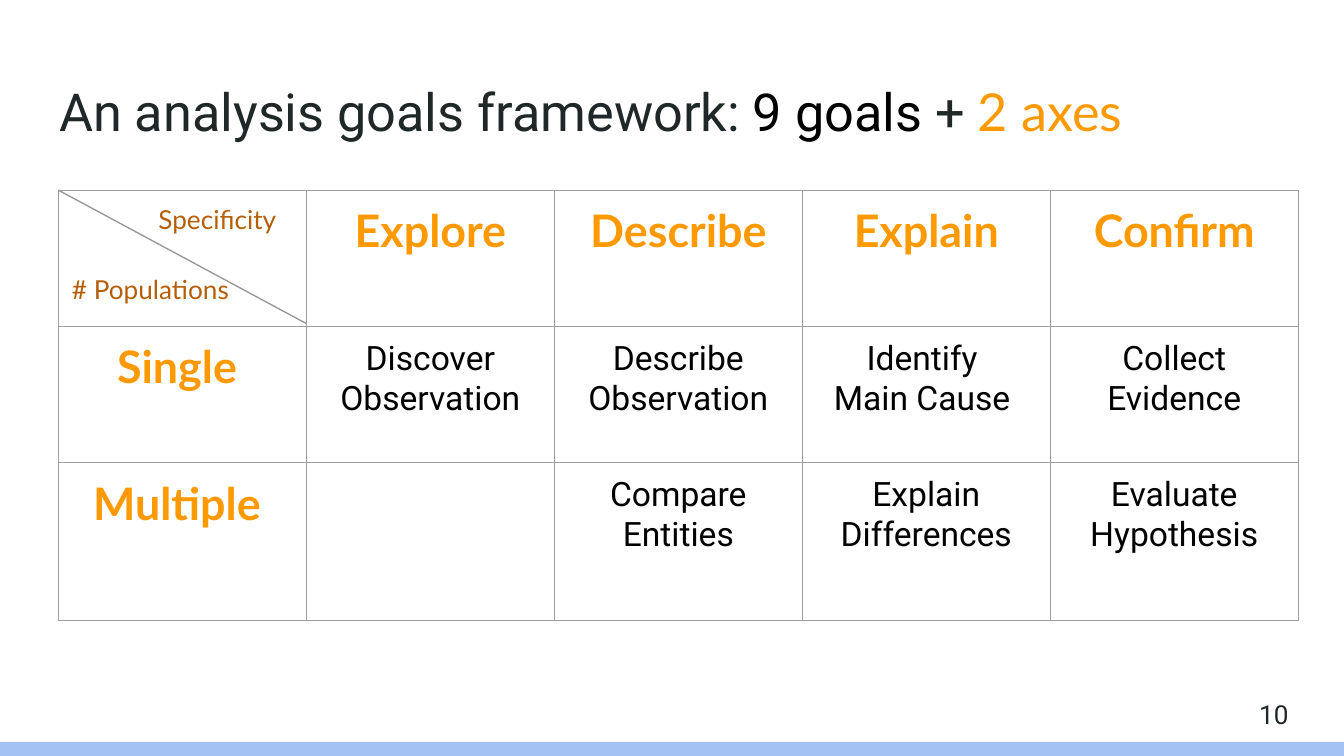
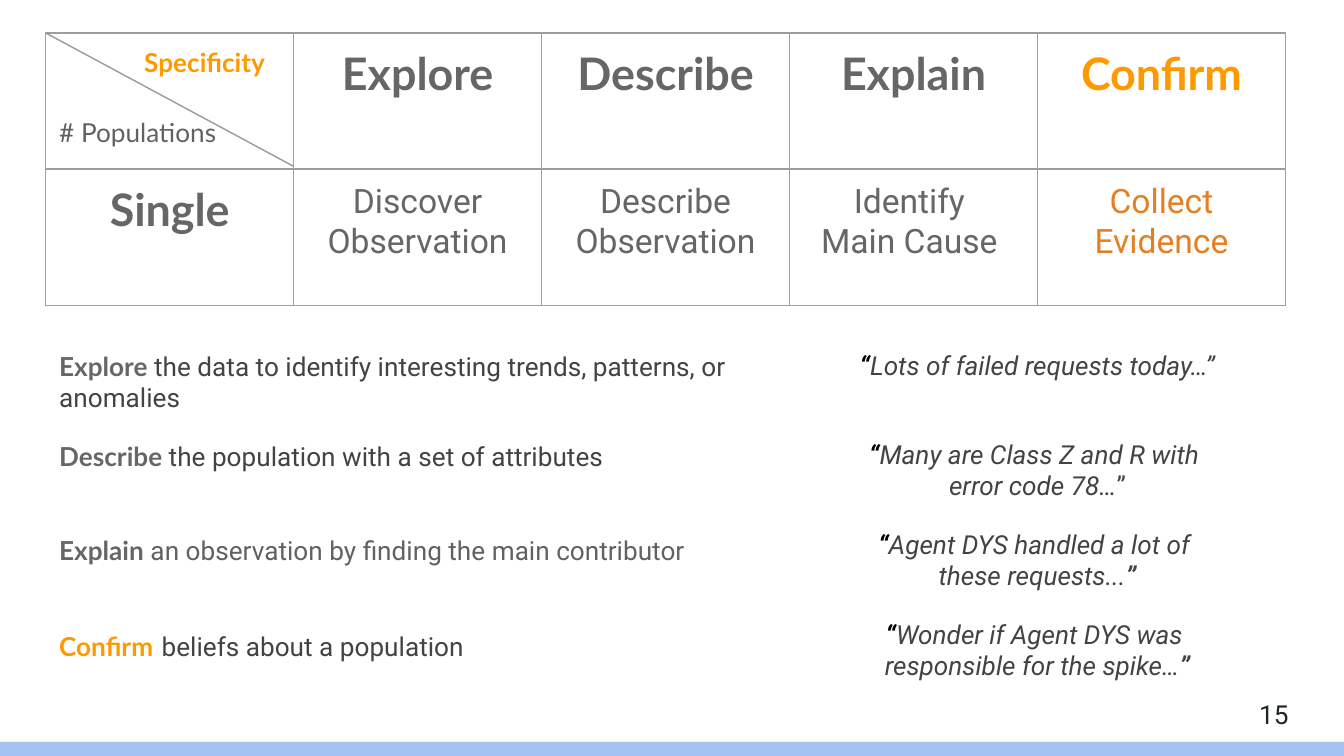
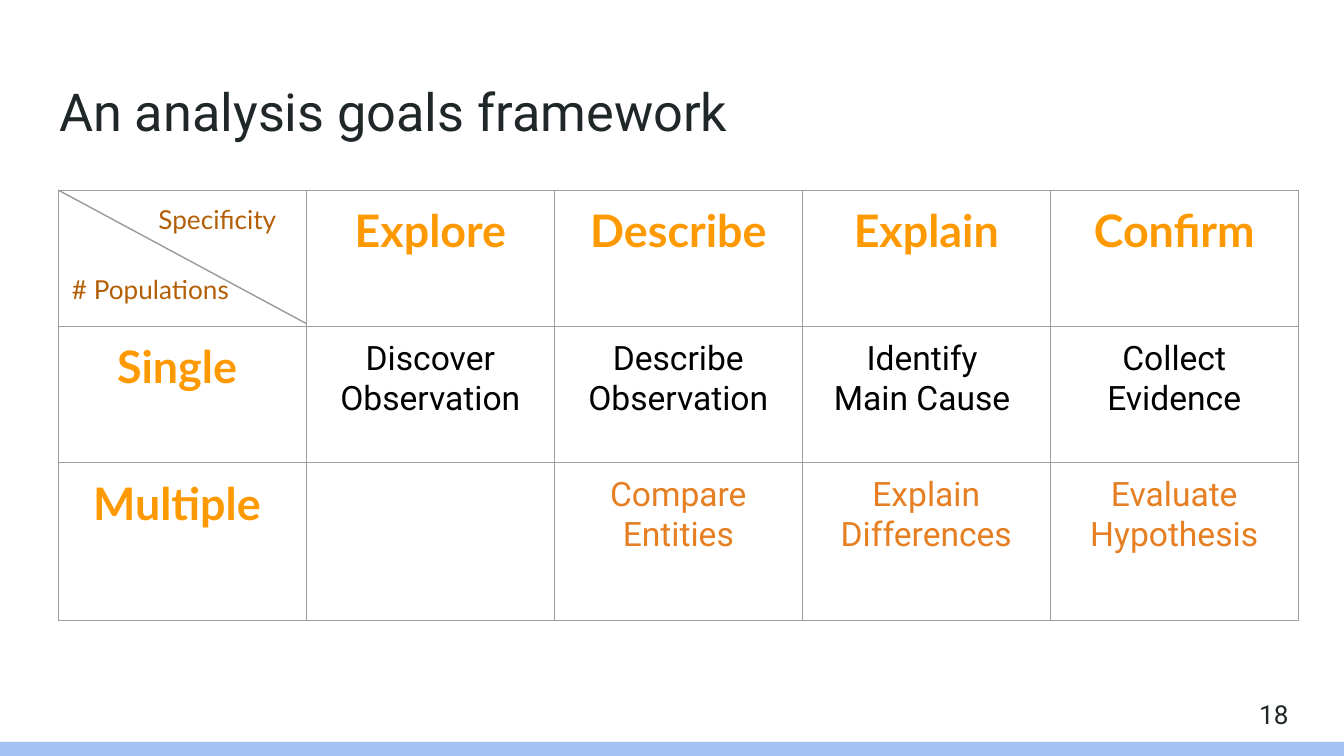
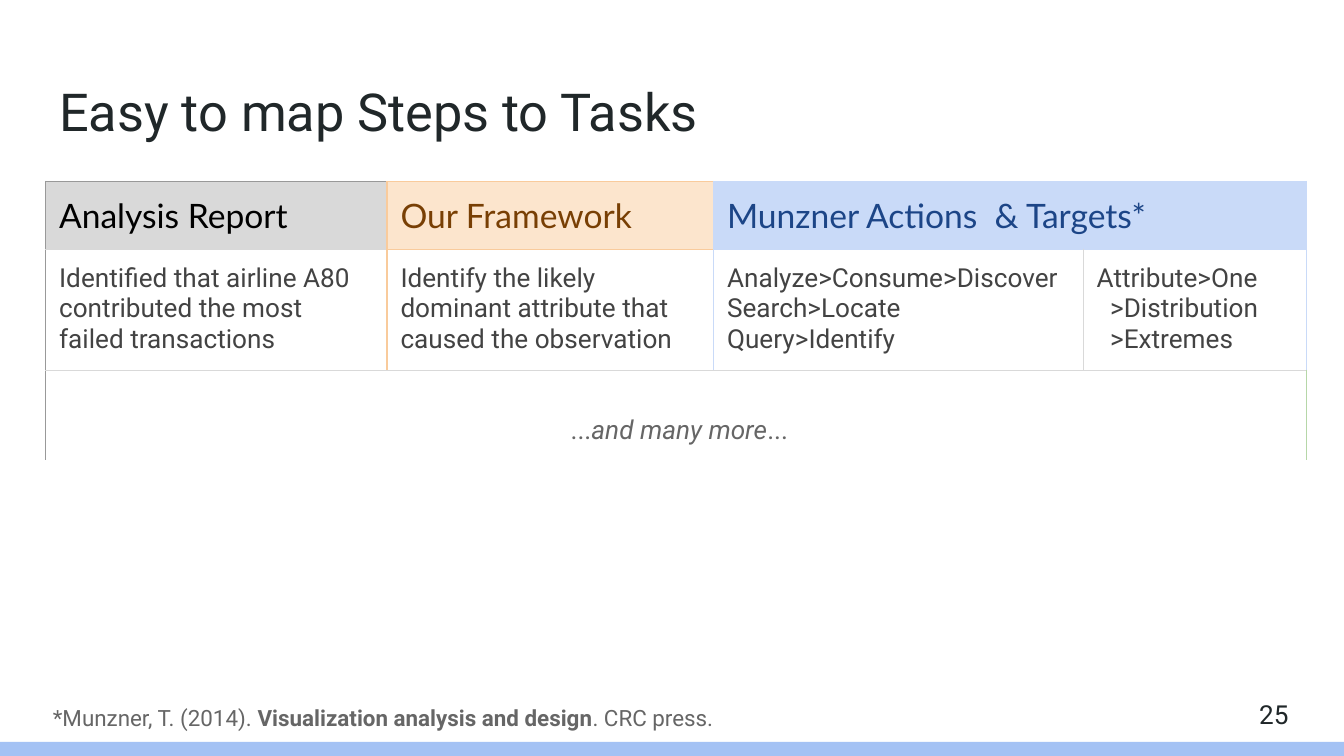
import dataclasses

import lxml.etree
import pptx
import pptx.dml.color
import pptx.enum.shapes
import pptx.enum.text
import pptx.oxml.ns
import pptx.util

ALIGN = pptx.enum.text.PP_ALIGN
ANCHOR = pptx.enum.text.MSO_ANCHOR
WIDE, HIGH = 100, 56.25
INSET = 1
MARGIN = 3.4
BLACK, INK, TEXT = "000000", "202729", "434343"
GREY, SOFT, LINE, RULE = "666666", "616161", "9E9E9E", "999999"
ORANGE, BROWN, CARROT = "FF9900", "B45F06", "E67E22"
SILVER, PEACH, SKY, LEAF = "D9D9D9", "F9CB9C", "C9DAF8", "B6D7A8"
NO_STYLE = "{2D5ABB26-0587-4C30-8999-92F81FD0307C}"
BOXED = dict.fromkeys("LRTB", LINE)
SPECIFICITY = ["Explore", "Describe", "Explain", "Confirm"]
SINGLE_GOALS = ["Discover Observation", "Describe Observation",
                "Identify \nMain Cause ", "Collect Evidence"]
MULTIPLE_GOALS = ["", "Compare Entities", "Explain Differences", "Evaluate Hypothesis"]


@dataclasses.dataclass
class Run:
    text: str
    font: str
    size: float
    color: str
    bold: bool = False
    italic: bool = False


@dataclasses.dataclass
class Para:
    runs: list
    align: object = ALIGN.LEFT
    before: float = 0
    after: float = 0
    spacing: float = 1.0
    indent: float = 0


def lato(text, size, color, bold=False):
    return Run(text, "Lato", size, color, bold)


def roboto(text, size, color, bold=False, italic=False):
    return Run(text, "Roboto", size, color, bold, italic)


def grid(n):
    return pptx.util.Inches(n / 10)


def rgb(color):
    return pptx.dml.color.RGBColor.from_string(color)


def add_run(p, spec):
    for i, text in enumerate(spec.text.split("\n")):
        if i:
            p.add_line_break()
        r = p.add_run()
        r.text = text
        r.font.name = spec.font
        r.font.size = pptx.util.Pt(spec.size)
        r.font.bold = spec.bold
        r.font.italic = spec.italic
        r.font.color.rgb = rgb(spec.color)


def write(tf, paras):
    tf.word_wrap = True
    for i, para in enumerate(paras):
        p = tf.add_paragraph() if i else tf.paragraphs[0]
        p.alignment = para.align
        p.line_spacing = para.spacing
        p.space_before = pptx.util.Pt(para.before)
        p.space_after = pptx.util.Pt(para.after)
        if para.indent:
            p._p.get_or_add_pPr().set("marL", str(grid(para.indent)))
        for spec in para.runs:
            add_run(p, spec)


def set_insets(holder, top=INSET):
    holder.margin_left = holder.margin_right = holder.margin_bottom = grid(INSET)
    holder.margin_top = grid(top)


def set_borders(cell, colors):
    tc_pr = cell._tc.get_or_add_tcPr()
    qn = pptx.oxml.ns.qn
    for side in "LRTB":
        ln = lxml.etree.SubElement(tc_pr, qn("a:ln" + side), w=str(pptx.util.Pt(0.75)))
        if side in colors:
            fill = lxml.etree.SubElement(ln, qn("a:solidFill"))
            lxml.etree.SubElement(fill, qn("a:srgbClr"), val=colors[side])
        else:
            lxml.etree.SubElement(ln, qn("a:noFill"))


def fill_cell(tbl, row, col, paras, borders, span=1, fill=None, top=INSET):
    for c in range(col, col + span):
        cell = tbl.cell(row, c)
        set_borders(cell, borders)
        if fill:
            cell.fill.solid()
            cell.fill.fore_color.rgb = rgb(fill)
        else:
            cell.fill.background()
    cell = tbl.cell(row, col)
    if span > 1:
        cell.merge(tbl.cell(row, col + span - 1))
    set_insets(cell, top)
    write(cell.text_frame, paras)


def add_table(s, left, top, widths, heights):
    frame = s.shapes.add_table(len(heights), len(widths), grid(left), grid(top),
                               grid(sum(widths)), grid(sum(heights)))
    tbl = frame.table
    tbl.first_row = tbl.horz_banding = False
    tbl._tbl.tblPr.find(pptx.oxml.ns.qn("a:tableStyleId")).text = NO_STYLE
    for column, width in zip(tbl.columns, widths):
        column.width = grid(width)
    for row, height in zip(tbl.rows, heights):
        row.height = grid(height)
    return tbl


def add_diagonal(s, left, top, width, height):
    line = s.shapes.add_connector(pptx.enum.shapes.MSO_CONNECTOR.STRAIGHT, grid(left),
                                  grid(top), grid(left + width), grid(top + height))
    line.line.color.rgb = rgb(RULE)
    line.line.width = pptx.util.Pt(0.75)
    lxml.etree.SubElement(line._element.spPr, pptx.oxml.ns.qn("a:effectLst"))


def add_text(s, left, top, width, height, runs, anchor=ANCHOR.TOP):
    tf = s.shapes.add_textbox(grid(left), grid(top), grid(width), grid(height)).text_frame
    set_insets(tf)
    tf.vertical_anchor = anchor
    write(tf, [Para(runs)])


def add_master_band(prs, s):
    band = s.shapes.add_shape(pptx.enum.shapes.MSO_SHAPE.RECTANGLE, 0, grid(HIGH - 1.05),
                              grid(WIDE), grid(1.05))
    band.shadow.inherit = False
    band.fill.solid()
    band.fill.fore_color.rgb = rgb("A4C2F4")
    band.line.fill.background()
    band._element.nvSpPr.cNvPr.set("id", "99")
    prs.slide_master.shapes._spTree.insert(2, band._element)


def add_slide(prs, number, title=None):
    s = prs.slides.add_slide(prs.slide_layouts[5 if title else 6])
    if title:
        sp = s.shapes.title
        sp.left, sp.top, sp.width, sp.height = map(
            grid, (MARGIN, 4.9, WIDE - 2 * MARGIN, 6.3))
        tf = sp.text_frame
        set_insets(tf)
        tf.vertical_anchor = ANCHOR.TOP
        tf.auto_size = pptx.enum.text.MSO_AUTO_SIZE.NONE
        write(tf, [Para(title)])
    add_text(s, WIDE - 7.3, HIGH - 5.25, 6, 4.3, [roboto(str(number), 14, INK)], ANCHOR.MIDDLE)
    return s


def title_run(text, color=INK):
    return roboto(text, 28, color)


def add_framework(s, left, top, heights, axes, head_colors, goal_rows):
    width = 18.45
    tbl = add_table(s, left, top, [width] * 5, heights)
    specificity, populations = axes
    fill_cell(tbl, 0, 0, [Para([specificity], ALIGN.CENTER, indent=5.2),
                          Para([populations], before=21)], BOXED)
    for col, (name, color) in enumerate(zip(SPECIFICITY, head_colors), 1):
        fill_cell(tbl, 0, col, [Para([lato(name, 24, color, True)], ALIGN.CENTER)], BOXED)
    for row, (label, label_color, goals, colors) in enumerate(goal_rows, 1):
        fill_cell(tbl, row, 0, [Para([lato(label, 24, label_color, True)], ALIGN.CENTER)], BOXED)
        for col, (goal, color) in enumerate(zip(goals, colors), 1):
            runs = [roboto(goal, 18, color)] if goal else []
            fill_cell(tbl, row, col, [Para(runs, ALIGN.CENTER)], BOXED)
    add_diagonal(s, left, top, width, heights[0] - 0.2)
    return tbl


def framework_slide(prs, number, title, multiple_color):
    s = add_slide(prs, number, title)
    axes = lato("Specificity", 14, BROWN), lato("# Populations", 14, BROWN)
    add_framework(s, 4.35, 14.15, [10.13, 10.13, 11.75], axes, [ORANGE] * 4,
                  [("Single ", ORANGE, SINGLE_GOALS, [BLACK] * 4),
                   ("Multiple ", ORANGE, MULTIPLE_GOALS, [multiple_color] * 4)])
    return s


def quote_paras(lines, closing):
    paras = [Para([roboto(line, 14, TEXT, italic=True)], ALIGN.CENTER) for line in lines]
    paras[0].runs.insert(0, roboto("“", 14, BLACK, True, True))
    paras[-1].runs.append(closing)
    return paras


def single_population_slide(prs, number):
    s = add_slide(prs, number)
    axes = lato("Specificity", 14, ORANGE, True), lato("# Populations", 14, SOFT)
    tbl = add_framework(s, MARGIN, 2.45, [10.13, 10.13, 9, 6.6, 6.6, 6.6], axes,
                        [GREY] * 3 + [ORANGE],
                        [("Single", GREY, SINGLE_GOALS, [GREY] * 3 + [CARROT])])
    bold_close = roboto("”", 14, TEXT, True, True)
    meanings = [
        (Para([lato("Explore ", 14, GREY, True),
               roboto("the data to identify interesting trends, patterns, or anomalies", 14, TEXT)]),
         ["Lots of failed requests today…"], roboto("”", 14, TEXT, italic=True)),
        (Para([lato("Describe ", 14, GREY, True),
               roboto("the population with a set of attributes", 14, TEXT)]),
         ["Many are Class Z and R with ", "error code 78…"], roboto("”", 14, TEXT)),
        (Para([lato("Explain", 14, GREY, True),
               roboto(" an observation by finding the main contributor", 14, SOFT)],
              after=16, spacing=1.15),
         ["Agent DYS handled a lot of ", "these requests..."], bold_close),
        (Para([lato("Confirm", 14, ORANGE, True), roboto(" ", 18, SOFT),
               roboto("beliefs about a population", 14, TEXT)], after=16, spacing=1.15),
         ["Wonder if Agent DYS was ", "responsible for the spike…"], bold_close),
    ]
    for row, (meaning, lines, closing) in enumerate(meanings, 2):
        borders, top = ({"T": LINE}, 3.4) if row == 2 else ({}, INSET)
        fill_cell(tbl, row, 0, [meaning], borders, 3, top=top)
        fill_cell(tbl, row, 3, quote_paras(lines, closing), borders, 2, top=top)


def mapping_slide(prs, number):
    s = add_slide(prs, number, [title_run("Easy to map Steps to Tasks")])
    tbl = add_table(s, MARGIN, 13.5, [25.4, 24.3, 27.5, 16.6], [5.05, 8.85, 6.65])
    report = {"L": RULE, "R": PEACH, "B": SILVER}
    framework = {"L": PEACH, "R": SKY, "T": PEACH}
    targets = dict.fromkeys("LRTB", SKY)
    heads = [("Analysis Report", BLACK, SILVER, {**report, "T": RULE}, 1),
             ("Our Framework", "783F04", "FCE5CD", {**framework, "B": PEACH}, 1),
             ("Munzner Actions  & Targets*", "1C4587", SKY, targets, 2)]
    for col, (text, color, fill, borders, span) in enumerate(heads):
        fill_cell(tbl, 0, col, [Para([lato(text, 18, color)])], borders, span, fill)
    steps = [
        (["Identified that airline A80 contributed the most failed transactions"],
         {**report, "T": SILVER}),
        (["Identify the likely dominant attribute that caused the observation"], framework),
        (["Analyze>Consume>Discover", "Search>Locate", "Query>Identify"],
         {**targets, "R": SILVER}),
        (["Attribute>One", ">Distribution", ">Extremes"], {**targets, "L": SILVER}),
    ]
    for col, (lines, borders) in enumerate(steps):
        paras = [Para([roboto(line, 14, TEXT)], indent=1 if line.startswith(">") else 0)
                 for line in lines]
        fill_cell(tbl, 1, col, paras, {**borders, "B": SILVER})
    more = [roboto("...", 14, GREY), roboto("and many more", 14, GREY, italic=True),
            roboto("...", 14, GREY)]
    fill_cell(tbl, 2, 0, [Para(more, ALIGN.CENTER, indent=0.5)],
              {"L": RULE, "T": SILVER, "R": LEAF}, 4, top=3.3)
    add_text(s, 2.95, HIGH - 4.85, WIDE - 5.9, 4.3,
             [roboto("*Munzner, T. (2014). ", 12, GREY),
              roboto("Visualization analysis and design", 12, GREY, True),
              roboto(". CRC press.", 12, GREY)])


def main():
    prs = pptx.Presentation()
    prs.slide_width, prs.slide_height = grid(WIDE), grid(HIGH)
    s = framework_slide(prs, 10, [title_run("An analysis goals framework: "),
                                  title_run("9 goals", BLACK), title_run(" + "),
                                  lato("2 axes", 28, ORANGE)], BLACK)
    add_master_band(prs, s)
    single_population_slide(prs, 15)
    framework_slide(prs, 18, [title_run("An analysis goals framework")], CARROT)
    mapping_slide(prs, 25)
    prs.save("out.pptx")


if __name__ == "__main__":
    main()
